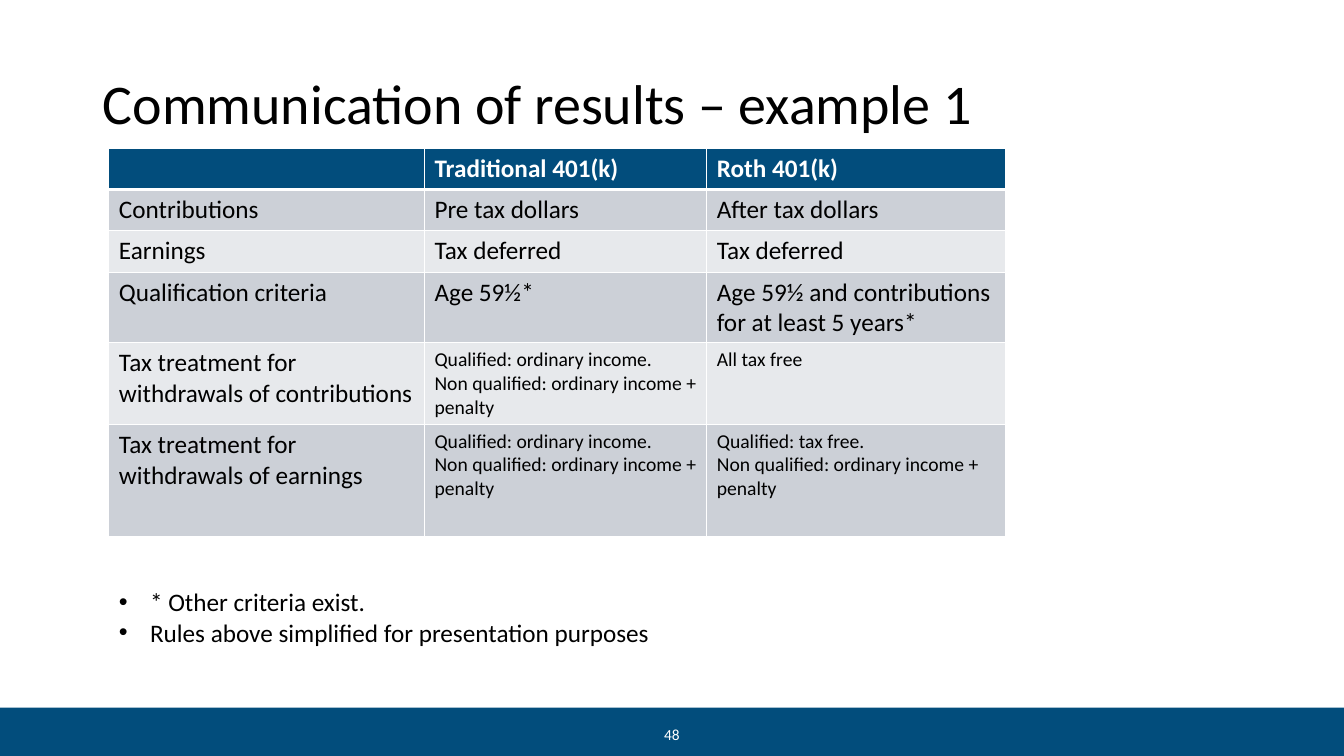
from typing import NamedTuple

from lxml import etree
from pptx import Presentation
from pptx import util as u
from pptx.dml.color import RGBColor
from pptx.enum import shapes, text
from pptx.oxml.ns import qn

PX = 9144  # 100 px to the inch
FONT = "Calibri"
NAVY = RGBColor(0x02, 0x4D, 0x7C)
WHITE = RGBColor(0xFF, 0xFF, 0xFF)
BLACK = RGBColor(0x00, 0x00, 0x00)
BAND_DARK = RGBColor(0xCC, 0xD0, 0xD7)
BAND_LIGHT = RGBColor(0xE7, 0xE9, 0xEC)

LABEL_SIZE, DETAIL_SIZE = 18, 14
ORDINARY = "Qualified: ordinary income."
PENALTY = "Non qualified: ordinary income + penalty"


class Row(NamedTuple):
    height: int
    cells: tuple[str, str, str]
    answer_size: int = LABEL_SIZE


COLUMN_WIDTHS = (313, 280, 296)
ROWS = (
    Row(41, ("", "Traditional 401(k)", "Roth 401(k)")),
    Row(41, ("Contributions", "Pre tax dollars", "After tax dollars")),
    Row(41, ("Earnings", "Tax deferred", "Tax deferred")),
    Row(70, ("Qualification criteria", "Age 59½*",
             "Age 59½ and contributions for at least 5 years*")),
    Row(81, ("Tax treatment for withdrawals of contributions",
             f"{ORDINARY}\n{PENALTY}", "All tax free"), DETAIL_SIZE),
    Row(111, ("Tax treatment for withdrawals of earnings",
              f"{ORDINARY}\n{PENALTY}", f"Qualified: tax free.\n{PENALTY}"), DETAIL_SIZE),
)
FOOTNOTES = ("* Other criteria exist.", "Rules above simplified for presentation purposes")


def px(*lengths: int) -> list[u.Emu]:
    return [u.Emu(length * PX) for length in lengths]


def style(paragraph, size: int, color: RGBColor, bold: bool = False) -> None:
    font = paragraph.font
    font.name, font.size, font.bold = FONT, u.Pt(size), bold
    font.color.rgb = color


def add_borders(cell, bottom_width: int) -> None:
    properties = cell._tc.get_or_add_tcPr()
    for side, width in (("L", 1), ("R", 1), ("T", 1), ("B", bottom_width)):
        line = etree.SubElement(properties, qn(f"a:ln{side}"), w=str(u.Pt(width)))
        fill = etree.SubElement(line, qn("a:solidFill"))
        etree.SubElement(fill, qn("a:srgbClr"), val=str(WHITE))


def add_title(slide) -> None:
    title = slide.shapes.title
    title.left, title.top, title.width, title.height = px(92, 36, 1150, 140)
    title.text_frame.text = "Communication of results – example 1"
    title.text_frame.vertical_anchor = text.MSO_ANCHOR.MIDDLE
    heading = title.text_frame.paragraphs[0]
    heading.alignment = text.PP_ALIGN.LEFT
    heading.line_spacing = 0.9
    style(heading, 40, BLACK)


def add_footer(slide) -> None:
    bar = slide.shapes.add_shape(shapes.MSO_SHAPE.RECTANGLE, *px(0, 702, 1333, 51))
    bar.shadow.inherit = False
    bar.fill.solid()
    bar.fill.fore_color.rgb = NAVY
    bar.line.fill.background()

    number = slide.shapes.add_textbox(*px(631, 717, 71, 22)).text_frame
    number.margin_top = number.margin_bottom = 0
    number.vertical_anchor = text.MSO_ANCHOR.MIDDLE
    number.word_wrap = True
    number.text = "48"
    number.paragraphs[0].alignment = text.PP_ALIGN.CENTER
    style(number.paragraphs[0], 11, WHITE)


def add_comparison(slide) -> None:
    height = sum(row.height for row in ROWS)
    comparison = slide.shapes.add_table(
        len(ROWS), len(COLUMN_WIDTHS), *px(108, 147, sum(COLUMN_WIDTHS), height)).table
    for column, width in zip(comparison.columns, px(*COLUMN_WIDTHS)):
        column.width = width
    for r, row in enumerate(ROWS):
        header = r == 0
        band = NAVY if header else BAND_DARK if r % 2 else BAND_LIGHT
        comparison.rows[r].height = px(row.height)[0]
        for c, wording in enumerate(row.cells):
            cell = comparison.cell(r, c)
            add_borders(cell, 3 if header else 1)
            cell.fill.solid()
            cell.fill.fore_color.rgb = band
            cell.text = wording
            for paragraph in cell.text_frame.paragraphs:
                style(paragraph, row.answer_size if c else LABEL_SIZE,
                      WHITE if header else BLACK, header)


def add_footnotes(slide) -> None:
    notes = slide.shapes.add_textbox(*px(108, 577, 698, 71)).text_frame
    notes.word_wrap = True
    notes.text = "\n".join(FOOTNOTES)
    indent = px(31)[0]
    for paragraph in notes.paragraphs:
        properties = paragraph._p.get_or_add_pPr()
        properties.set("marL", str(indent))
        properties.set("indent", str(-indent))
        etree.SubElement(properties, qn("a:buFont"), typeface="Arial")
        etree.SubElement(properties, qn("a:buChar"), char="•")
        style(paragraph, LABEL_SIZE, BLACK)


def main() -> None:
    deck = Presentation()
    deck.slide_width, deck.slide_height = px(1333, 750)
    slide = deck.slides.add_slide(deck.slide_layouts[5])
    add_title(slide)
    add_footer(slide)
    add_comparison(slide)
    add_footnotes(slide)
    deck.save("out.pptx")


if __name__ == "__main__":
    main()
